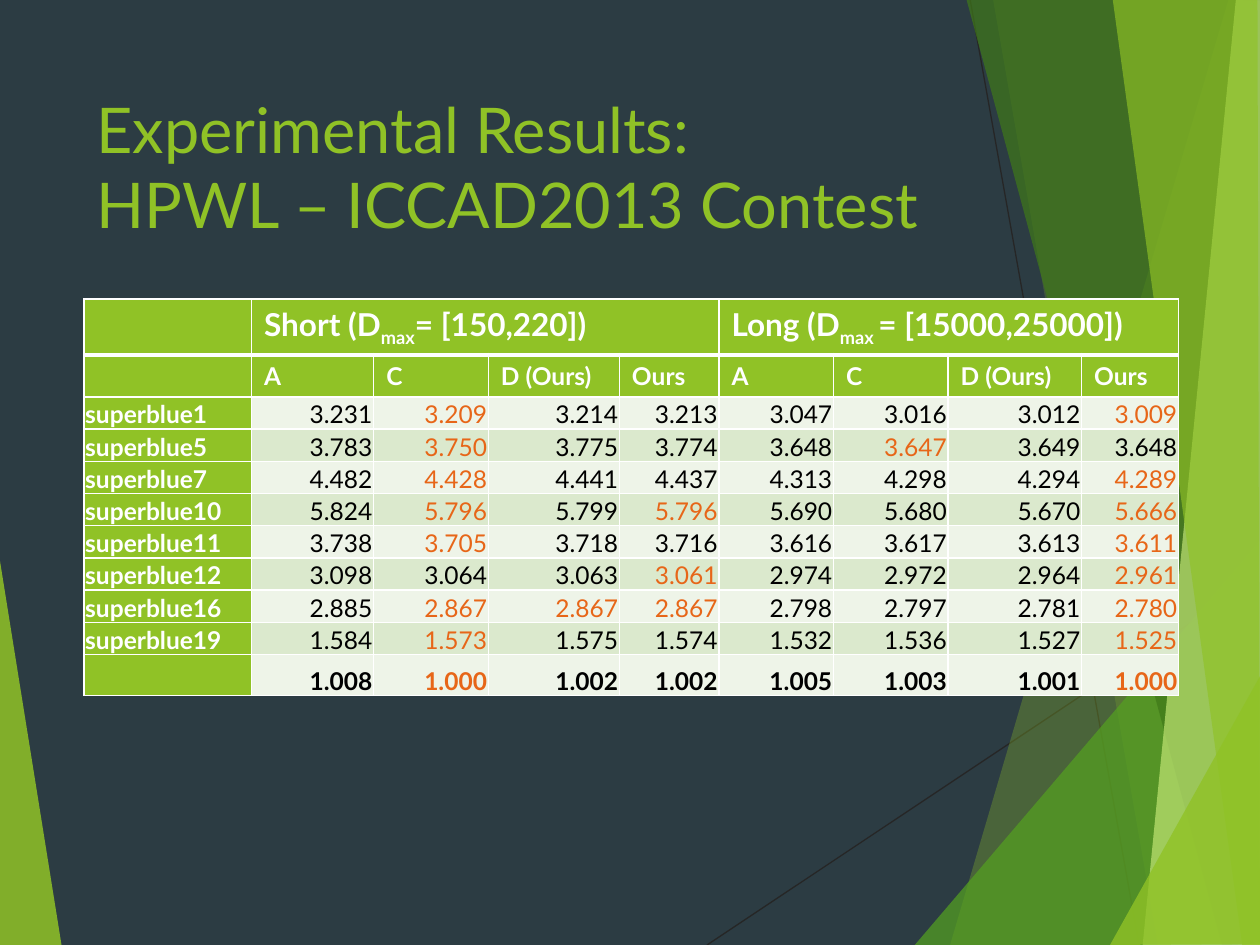
"""Build the slide of HPWL results on the ICCAD2013 contest benchmarks."""
from lxml import etree
from pptx import Presentation
from pptx import util as u
from pptx.dml.color import RGBColor
from pptx.enum import shapes, text
from pptx.oxml.ns import qn

GREEN, WHITE, BLACK, ORANGE = "90C226", "FFFFFF", "000000", "E76618"
BANDS = "EEF4E8", "DBE9CD"

RAYS = [((404, 540), (720.7, 329)), ((554.4, 0), (650.9, 540))]
FACETS = [
    (GREEN, 85, [(-0.7, 316), (35.3, 540.7), (-0.7, 540)]),
    (GREEN, 30, [(702, 0), (542.9, 540), (721.4, 540.7), (720.7, 0.7)]),
    (GREEN, 20, [(567.4, -0.7), (661.7, 540), (720.7, 540), (720.7, -0.7)]),
    ("54A021", 72, [(522.7, 540), (720, 308.9), (720.7, 540)]),
    ("3F7819", 70, [(552.2, -0.7), (698.4, 540), (720.7, 539.3), (720.7, -0.7)]),
    ("C0E474", 70, [(706.3, -0.7), (653, 540), (720.7, 540), (720, -0.7)]),
    (GREEN, 65, [(635.8, -0.7), (709.9, 540), (720, 540), (718.6, -0.7)]),
    (GREEN, 80, [(634.3, 540), (720.7, 385.2), (720.7, 539.3)]),
]

DISPLACEMENTS = [("Short (D", "max", "= [150,220])"), ("Long (D", "max ", "= [15000,25000])")]
PLACERS = ["A", "C", "D (Ours)", "Ours"]
BENCHMARKS = [
    ("superblue1", "3.231 3.209* 3.214 3.213 3.047 3.016 3.012 3.009*"),
    ("superblue5", "3.783 3.750* 3.775 3.774 3.648 3.647* 3.649 3.648"),
    ("superblue7", "4.482 4.428* 4.441 4.437 4.313 4.298 4.294 4.289*"),
    ("superblue10", "5.824 5.796* 5.799 5.796* 5.690 5.680 5.670 5.666*"),
    ("superblue11", "3.738 3.705* 3.718 3.716 3.616 3.617 3.613 3.611*"),
    ("superblue12", "3.098 3.064 3.063 3.061* 2.974 2.972 2.964 2.961*"),
    ("superblue16", "2.885 2.867* 2.867* 2.867* 2.798 2.797 2.781 2.780*"),
    ("superblue19", "1.584 1.573* 1.575 1.574 1.532 1.536 1.527 1.525*"),
    ("", "1.008 1.000* 1.002 1.002 1.005 1.003 1.001 1.000*"),
]
COLUMNS = [95.8, 69.8, 65.5, 74.9, 56.9, 65.5, 65.5, 76.3, 55.4]
ROWS = [32, 23.4] + [18.4] * 8 + [23.6]


def color(code):
    """Turn a hex string into a colour."""
    return RGBColor.from_string(code)


def write(paragraph, words, size=14, tint=WHITE, bold=False, baseline=0):
    """Add a run of text to a paragraph."""
    run = paragraph.add_run()
    run.text = words
    run.font.name = "Lato"
    run.font.size = u.Pt(size)
    run.font.bold = bold
    run.font.color.rgb = color(tint)
    if baseline:
        run.font._element.set("baseline", str(baseline * 1000))


class Deck:
    """Holds the presentation, its style and the current slide."""

    def __init__(self, width, height, backdrop):
        """Start a deck with one blank slide."""
        self.show = Presentation()
        self.show.slide_width, self.show.slide_height = u.Pt(width), u.Pt(height)
        self.slide = self.show.slides.add_slide(self.show.slide_layouts[6])
        self.slide.background.fill.solid()
        self.slide.background.fill.fore_color.rgb = color(backdrop)

    def ray(self, start, end):
        """Draw a thin line."""
        ends = [u.Pt(length) for length in (*start, *end)]
        line = self.slide.shapes.add_connector(shapes.MSO_CONNECTOR.STRAIGHT, *ends)
        line.line.color.rgb = color("262626")
        line.line.width = u.Pt(0.75)
        etree.SubElement(line._element.spPr, qn("a:effectLst"))

    def facet(self, tint, opacity, corners):
        """Draw a translucent polygon."""
        first, *others = [(u.Pt(x), u.Pt(y)) for x, y in corners]
        builder = self.slide.shapes.build_freeform(*first)
        builder.add_line_segments(others, close=True)
        facet = builder.convert_to_shape()
        facet.shadow.inherit = False
        facet.line.fill.background()
        facet.fill.solid()
        facet.fill.fore_color.rgb = color(tint)
        shade = facet._element.spPr.find(".//" + qn("a:srgbClr"))
        etree.SubElement(shade, qn("a:alpha"), val=str(opacity * 1000))

    def title(self, lines, left, top, width, height):
        """Add the heading, with a line break between its lines."""
        frame = self.slide.shapes.add_textbox(*map(u.Pt, (left, top, width, height))).text_frame
        frame.word_wrap = True
        heading = frame.paragraphs[0]
        for number, line in enumerate(lines):
            if number:
                heading.add_line_break()
            write(heading, line, size=36, tint=GREEN)

    def table(self, columns, rows, left, top):
        """Add a plain table with the given column widths and row heights."""
        frame = self.slide.shapes.add_table(
            len(rows), len(columns), *map(u.Pt, (left, top, sum(columns), sum(rows))))
        grid = frame.table
        grid.first_row = grid.horz_banding = False
        for column, width in zip(grid.columns, columns):
            column.width = u.Pt(width)
        for row, height in zip(grid.rows, rows):
            row.height = u.Pt(height)
        return grid

    def cell(self, cell, fill, above=1, below=1):
        """Give a cell its white borders and fill, and return its paragraph."""
        properties = cell._tc.get_or_add_tcPr()
        for side, weight in zip("LRTB", (1, 1, above, below)):
            border = etree.SubElement(properties, qn("a:ln" + side), w=str(u.Pt(weight)))
            solid = etree.SubElement(border, qn("a:solidFill"))
            etree.SubElement(solid, qn("a:srgbClr"), val=WHITE)
        cell.fill.solid()
        cell.fill.fore_color.rgb = color(fill)
        paragraph = cell.text_frame.paragraphs[0]
        paragraph._p.get_or_add_endParaRPr().set("sz", "1400")
        return paragraph

    def tight_cell(self, cell, fill):
        """Style a cell whose text sits at the bottom with narrow margins."""
        cell.margin_left = cell.margin_right = cell.margin_top = u.Pt(0.72)
        cell.margin_bottom = 0
        cell.vertical_anchor = text.MSO_ANCHOR.BOTTOM
        return self.cell(cell, fill)


def fill_results(deck, grid):
    """Fill the header rows and the benchmark rows."""
    headers = [deck.cell(grid.cell(0, column), GREEN, below=3) for column in range(9)]
    for column, (lead, subscript, limits) in zip((1, 5), DISPLACEMENTS):
        grid.cell(0, column).merge(grid.cell(0, column + 3))
        write(headers[column], lead, size=18, bold=True)
        write(headers[column], subscript, size=18, bold=True, baseline=-25)
        write(headers[column], limits, size=18, bold=True)

    for column, placer in enumerate([""] + PLACERS * 2):
        label = deck.cell(grid.cell(1, column), GREEN, above=3)
        if placer:
            write(label, placer, bold=True)

    for index, (benchmark, lengths) in enumerate(BENCHMARKS):
        row = index + 2
        name = deck.tight_cell(grid.cell(row, 0), GREEN)
        if benchmark:
            write(name, benchmark, bold=True)
        for column, length in enumerate(lengths.split(), 1):
            value = deck.tight_cell(grid.cell(row, column), BANDS[index % 2])
            value.alignment = text.PP_ALIGN.RIGHT
            tint = ORANGE if length.endswith("*") else BLACK
            write(value, length.rstrip("*"), tint=tint, bold=not benchmark)


def main():
    """Build and save the slide."""
    deck = Deck(720, 540, "2C3C43")
    for start, end in RAYS:
        deck.ray(start, end)
    for tint, opacity, corners in FACETS:
        deck.facet(tint, opacity, corners)
    deck.title(["Experimental Results:", "HPWL – ICCAD2013 Contest"], 48, 48, 500, 104)
    fill_results(deck, deck.table(COLUMNS, ROWS, 48, 170.8))
    deck.show.save("out.pptx")


if __name__ == "__main__":
    main()
